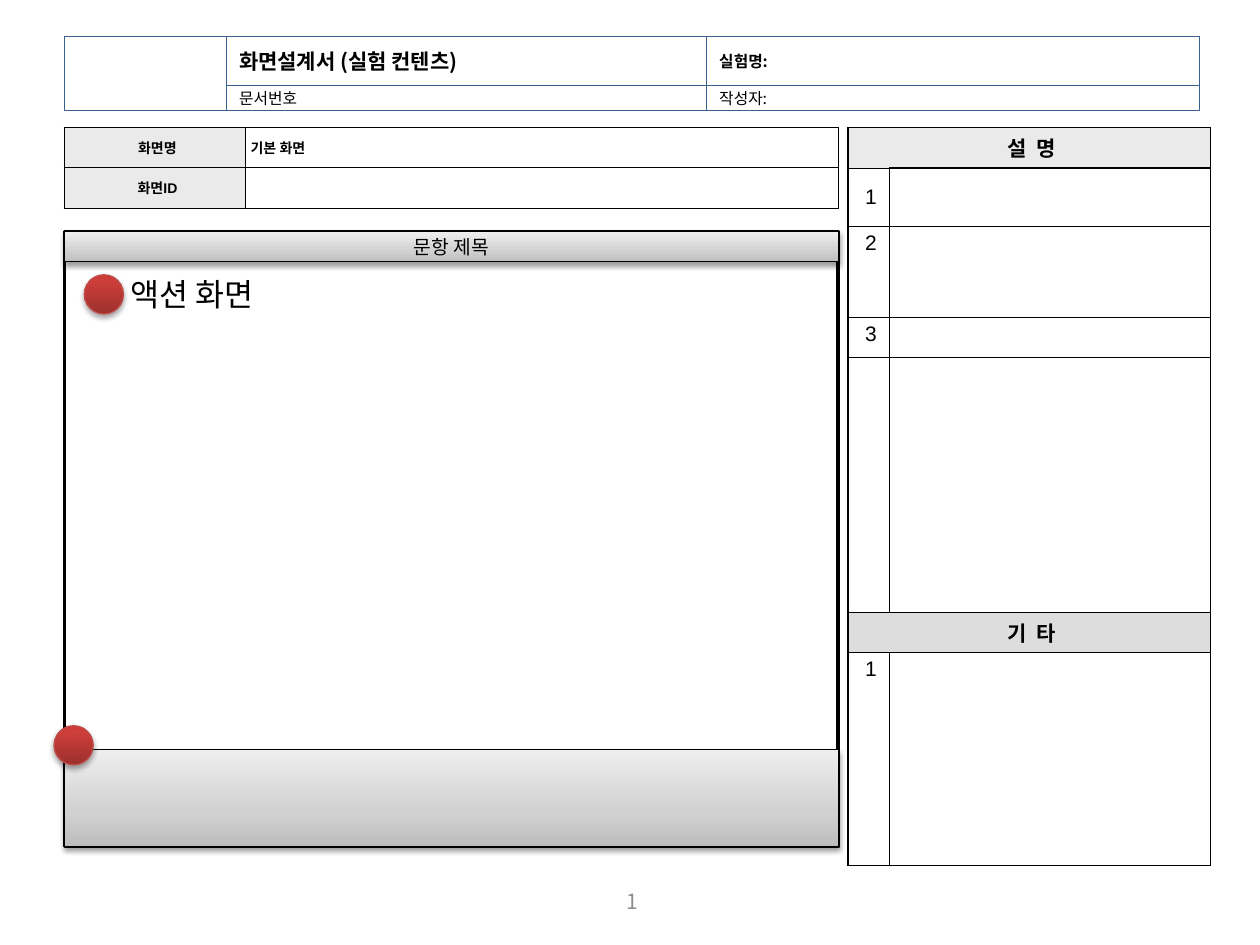
from dataclasses import dataclass
from typing import Any, NamedTuple, Optional

import lxml.etree
import pptx
import pptx.dml.color
import pptx.enum.shapes
import pptx.enum.text
import pptx.oxml.ns
import pptx.util

Cm, Pt, qn = pptx.util.Cm, pptx.util.Pt, pptx.oxml.ns.qn
Align, Anchor = pptx.enum.text.PP_ALIGN, pptx.enum.text.MSO_ANCHOR
Kind = pptx.enum.shapes.MSO_SHAPE


@dataclass(frozen=True)
class Theme:
    body_font: str = "Noto Sans CJK KR"
    table_font: str = "Arial"
    ink: str = "000000"
    paper: str = "FFFFFF"
    header_line: str = "3A5F8C"
    dot_line: str = "BF4C48"
    page_number: str = "8C8C8C"
    label_fill: str = "EAEAEA"
    etc_fill: str = "DDDDDD"
    bar_stops: tuple = ((0, "BDBDBD"), (35, "D1D1D1"), (100, "EEEEEE"))
    dot_stops: tuple = ((0, "9C2F2D"), (80, "CB3E3A"), (100, "CE3B37"))
    tiny: float = 8
    small: float = 9
    bar: float = 11
    heading: float = 12
    action: float = 18
    thin: float = 0.25
    thick: float = 1


THEME = Theme()


class Box(NamedTuple):
    """Left, top, width and height in centimetres."""
    left: float
    top: float
    width: float
    height: float

    def lengths(self) -> list:
        return [Cm(value) for value in self]


class Style(NamedTuple):
    size: float
    bold: bool = False
    color: str = THEME.ink
    font: str = THEME.body_font
    align: Any = Align.LEFT
    spacing: float = 0


class Entry(NamedTuple):
    row: int
    col: int
    text: str
    style: Style
    fill: Optional[str] = None
    anchor: Any = Anchor.MIDDLE
    span: int = 1


class Grid(NamedTuple):
    left: float
    top: float
    cols: list
    rows: list
    size: float
    entries: list
    top_line: float = THEME.thin
    bottom_line: float = THEME.thin
    thick_top_cell: Optional[tuple] = None


def rgb(color: str):
    return pptx.dml.color.RGBColor.from_string(color)


def write(frame, text: str, style: Style) -> None:
    frame.text = text
    paragraph = frame.paragraphs[0]
    paragraph.alignment = style.align
    for run in paragraph.runs:
        run.font.size = Pt(style.size)
        run.font.bold = style.bold
        run.font.name = style.font
        run.font.color.rgb = rgb(style.color)
        properties = run.font._element
        if style.spacing:
            properties.set("spc", str(round(style.spacing * 100)))
        if style.font == THEME.body_font:
            lxml.etree.SubElement(properties, qn("a:ea"), typeface=style.font)


def add_panel(slide, box: Box, line: str, width: float, text: str = "",
              style: Optional[Style] = None, kind=Kind.RECTANGLE):
    panel = slide.shapes.add_shape(kind, *box.lengths())
    panel.shadow.inherit = False
    panel.fill.solid()
    panel.fill.fore_color.rgb = rgb(THEME.paper)
    panel.line.color.rgb = rgb(line)
    panel.line.width = Pt(width)
    panel.text_frame.vertical_anchor = Anchor.MIDDLE
    if style:
        write(panel.text_frame, text, style)
    return panel


def shade(panel, stops: tuple, distance: float, opacity: int) -> None:
    """Give a panel an upward gradient and a soft shadow below it."""
    panel.fill.gradient()
    panel.fill.gradient_angle = 90
    stop_list = panel._element.spPr.find(".//" + qn("a:gsLst"))
    for stop in list(stop_list):
        stop_list.remove(stop)
    for position, color in stops:
        stop = lxml.etree.SubElement(stop_list, qn("a:gs"), pos=str(position * 1000))
        lxml.etree.SubElement(stop, qn("a:srgbClr"), val=color)
    effects = panel._element.spPr.find(qn("a:effectLst"))
    shadow = lxml.etree.SubElement(
        effects, qn("a:outerShdw"), blurRad=str(Pt(3.1)), dist=str(Pt(distance)),
        dir="5400000", rotWithShape="0")
    color = lxml.etree.SubElement(shadow, qn("a:srgbClr"), val=THEME.ink)
    lxml.etree.SubElement(color, qn("a:alpha"), val=str(opacity * 1000))


def add_bar(slide, box: Box, text: str = "", style: Optional[Style] = None) -> None:
    shade(add_panel(slide, box, THEME.ink, 0.75, text, style), THEME.bar_stops, 1.6, 38)


def add_dot(slide, left: float, top: float) -> None:
    dot = add_panel(slide, Box(left, top, 0.79, 0.79), THEME.dot_line, 0.75, kind=Kind.OVAL)
    shade(dot, THEME.dot_stops, 1.8, 35)


def add_text(slide, box: Box, text: str, style: Style, anchor) -> None:
    frame = slide.shapes.add_textbox(*box.lengths()).text_frame
    frame.word_wrap = True
    frame.vertical_anchor = anchor
    write(frame, text, style)


def border(cell, edge: str, width: float) -> None:
    line = lxml.etree.SubElement(
        cell._tc.get_or_add_tcPr(), qn("a:ln" + edge), w=str(Pt(width)))
    fill = lxml.etree.SubElement(line, qn("a:solidFill"))
    lxml.etree.SubElement(fill, qn("a:srgbClr"), val=THEME.ink)


def add_grid(slide, grid: Grid) -> None:
    box = Box(grid.left, grid.top, sum(grid.cols), sum(grid.rows))
    table = slide.shapes.add_table(len(grid.rows), len(grid.cols), *box.lengths()).table
    table.first_row = table.horz_banding = False
    for column, width in zip(table.columns, grid.cols):
        column.width = Cm(width)
    for row, height in zip(table.rows, grid.rows):
        row.height = Cm(height)

    entries = {(entry.row, entry.col): entry for entry in grid.entries}
    last_row, last_col = len(grid.rows) - 1, len(grid.cols) - 1
    for r in range(last_row + 1):
        for c in range(last_col + 1):
            cell, entry = table.cell(r, c), entries.get((r, c))
            right = c + (entry.span - 1 if entry else 0)
            top = grid.top_line if r == 0 else THEME.thin
            border(cell, "L", THEME.thick if c == 0 else THEME.thin)
            border(cell, "R", THEME.thick if right == last_col else THEME.thin)
            border(cell, "T", THEME.thick if (r, c) == grid.thick_top_cell else top)
            border(cell, "B", grid.bottom_line if r == last_row else THEME.thin)
            cell.fill.background()
            cell.margin_left = cell.margin_top = cell.margin_bottom = Cm(0.1)
            cell.margin_right = 0
            if not entry:
                lxml.etree.SubElement(cell.text_frame.paragraphs[0]._p, qn("a:endParaRPr"),
                                      sz=str(round(grid.size * 100)))
                continue
            write(cell.text_frame, entry.text, entry.style)
            cell.vertical_anchor = entry.anchor
            if entry.fill:
                cell.fill.solid()
                cell.fill.fore_color.rgb = rgb(entry.fill)
    for entry in grid.entries:
        if entry.span > 1:
            table.cell(entry.row, entry.col).merge(
                table.cell(entry.row, entry.col + entry.span - 1))


def main() -> None:
    deck = pptx.Presentation()
    deck.slide_width, deck.slide_height = Cm(25.4), Cm(19.05)
    slide = deck.slides.add_slide(deck.slide_layouts[6])

    small = Style(THEME.small)
    for box, text, style in (
        (Box(1.3, 0.74, 3.27, 1.49), "", None),
        (Box(4.57, 1.73, 9.68, 0.5), "문서번호", small),
        (Box(14.25, 1.73, 9.93, 0.5), "작성자:", small),
        (Box(4.57, 0.74, 9.68, 0.99), "화면설계서 (실험 컨텐츠)", Style(THEME.heading, True)),
        (Box(14.25, 0.74, 9.93, 0.99), "실험명:", Style(THEME.small, True)),
    ):
        add_panel(slide, box, THEME.header_line, 0.5, text, style)

    screen = Box(1.3, 4.67, 15.6, 12.4)
    add_panel(slide, screen, THEME.ink, 2)

    section = Style(THEME.heading, True, font=THEME.table_font, align=Align.CENTER, spacing=1.65)
    number = section._replace(bold=False, spacing=0)
    label = Style(THEME.tiny, True, font=THEME.table_font, align=Align.CENTER)
    add_grid(slide, Grid(
        17.09, 2.57, [0.83, 6.48], [0.82, 1.17, 1.83, 0.81, 5.14, 0.81, 4.29], THEME.heading,
        [Entry(0, 0, "설 명", section, THEME.label_fill, span=2),
         Entry(1, 0, "1", number),
         Entry(2, 0, "2", number, anchor=Anchor.TOP),
         Entry(3, 0, "3", number, anchor=Anchor.TOP),
         Entry(5, 0, "기 타", section, THEME.etc_fill, span=2),
         Entry(6, 0, "1", number, anchor=Anchor.TOP)],
        bottom_line=THEME.thick, thick_top_cell=(1, 1)))
    add_grid(slide, Grid(
        1.3, 2.57, [1.74, 1.91, 11.95], [0.81, 0.81], THEME.tiny,
        [Entry(0, 0, "화면명", label, THEME.label_fill, span=2),
         Entry(0, 2, "기본 화면", label._replace(align=Align.LEFT)),
         Entry(1, 0, "화면ID", label, THEME.label_fill, span=2)],
        top_line=THEME.thick))

    add_bar(slide, screen._replace(height=0.61), "문항 제목",
            Style(THEME.bar, align=Align.CENTER))
    add_text(slide, Box(9.78, 17.65, 5.92, 1.02), "1",
             Style(THEME.heading, color=THEME.page_number, align=Align.CENTER), Anchor.MIDDLE)
    add_bar(slide, screen._replace(top=15.11, height=1.96))
    add_text(slide, Box(2.39, 5.41, 7.39, 1.02), "액션 화면", Style(THEME.action), Anchor.TOP)
    add_dot(slide, 1.7, 5.54)
    add_dot(slide, 1.09, 14.63)

    deck.save("out.pptx")


if __name__ == "__main__":
    main()
